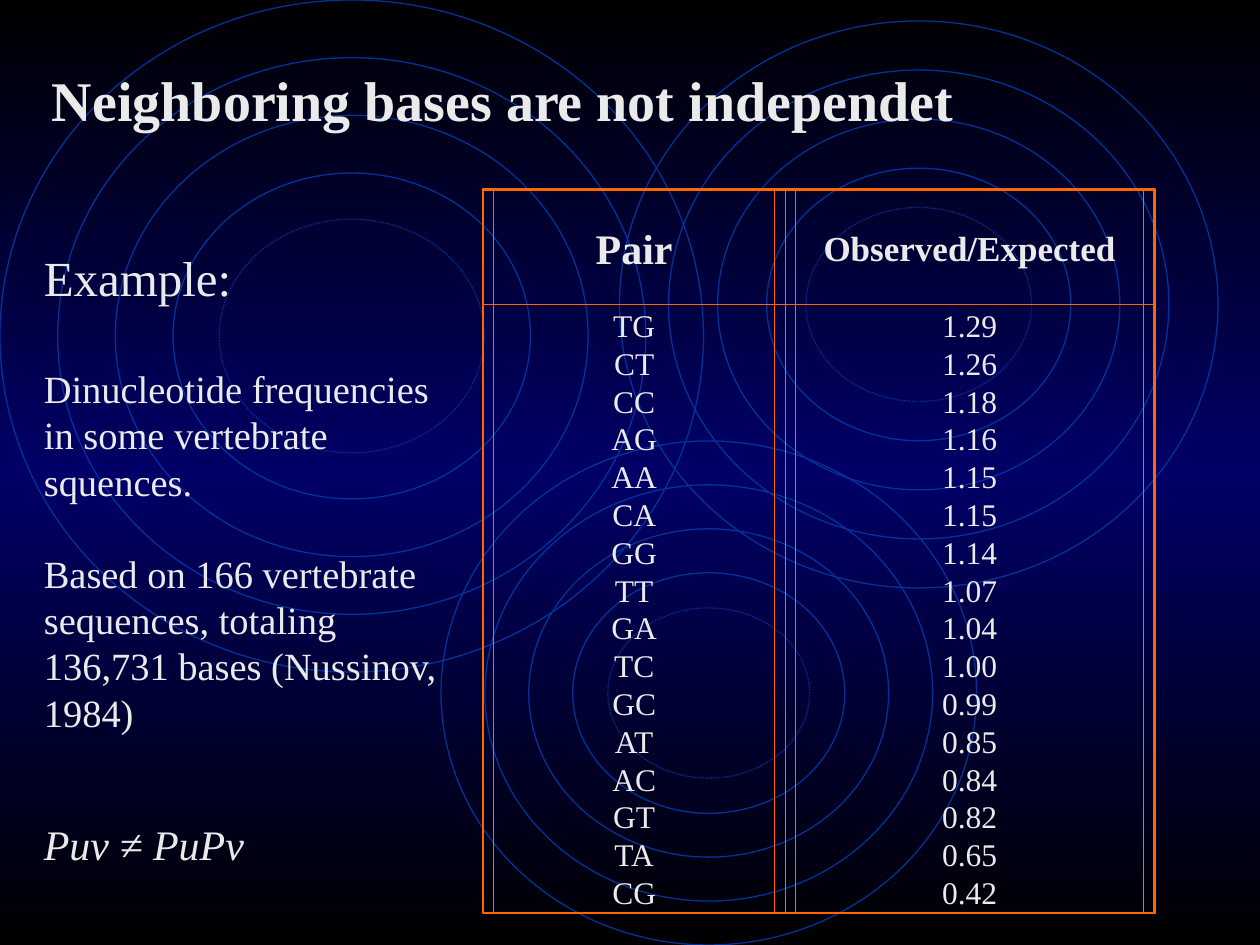
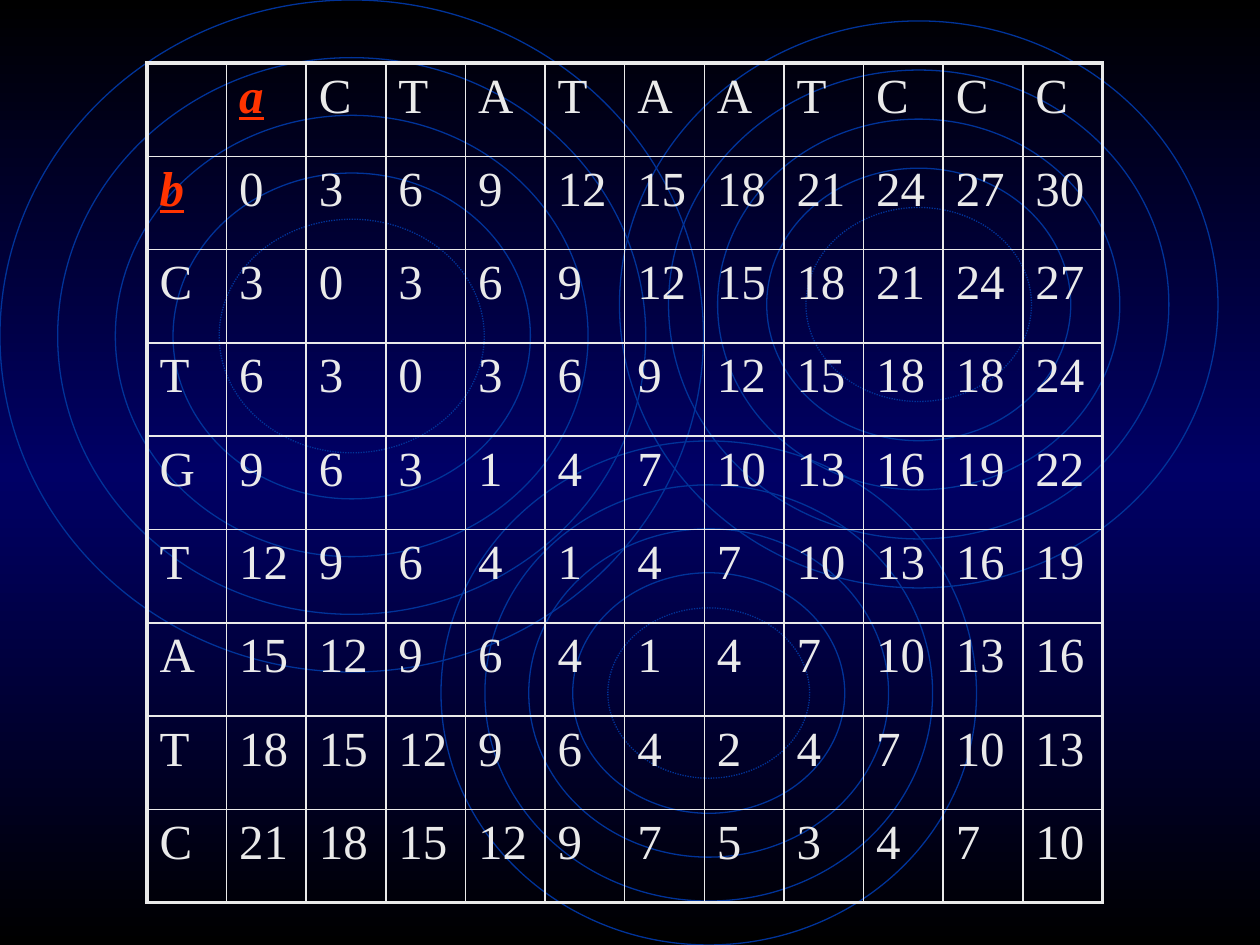
"""Build two slides on nucleotide pairs and a sequence distance matrix."""
from copy import deepcopy

from lxml import etree
from pptx import Presentation
from pptx.dml.color import RGBColor
from pptx.enum.dml import MSO_LINE
from pptx.enum.shapes import MSO_SHAPE
from pptx.enum.text import MSO_ANCHOR, MSO_AUTO_SIZE, PP_ALIGN
from pptx.oxml.ns import qn
from pptx.util import Inches, Pt

OVAL, RECTANGLE = MSO_SHAPE.OVAL, MSO_SHAPE.RECTANGLE
DOTTED = MSO_LINE.ROUND_DOT
LEFT, CENTER = PP_ALIGN.LEFT, PP_ALIGN.CENTER
TOP, MIDDLE = MSO_ANCHOR.TOP, MSO_ANCHOR.MIDDLE
NO_AUTOFIT = MSO_AUTO_SIZE.NONE

BLACK = RGBColor(0x00, 0x00, 0x00)
NAVY = RGBColor(0x00, 0x00, 0x66)
RING_BLUE = RGBColor(0x00, 0x33, 0x99)
ORANGE = RGBColor(0xFF, 0x66, 0x00)
RED = RGBColor(0xFF, 0x33, 0x00)
PALE = RGBColor(0xEA, 0xEA, 0xEA)
FONT = "Times New Roman"

GRID_COLUMNS, GRID_ROWS = 120, 90
TITLE_ONLY, BLANK = 5, 6
RING_GROUPS = [(0, 0, 67, 64), (42, 42, 51, 48), (59, 2, 57, 54)]
RING_STEPS = [0, 1, 2, 3, 3.8]
RING_STEP_SHARE = 0.082

PAIR_RATIOS = [
    ("TG", "1.29"), ("CT", "1.26"), ("CC", "1.18"), ("AG", "1.16"),
    ("AA", "1.15"), ("CA", "1.15"), ("GG", "1.14"), ("TT", "1.07"),
    ("GA", "1.04"), ("TC", "1.00"), ("GC", "0.99"), ("AT", "0.85"),
    ("AC", "0.84"), ("GT", "0.82"), ("TA", "0.65"), ("CG", "0.42"),
]
DISTANCES = [
    ["", *"aCTATAATCCC"],
    ["b", 0, 3, 6, 9, 12, 15, 18, 21, 24, 27, 30],
    ["C", 3, 0, 3, 6, 9, 12, 15, 18, 21, 24, 27],
    ["T", 6, 3, 0, 3, 6, 9, 12, 15, 18, 18, 24],
    ["G", 9, 6, 3, 1, 4, 7, 10, 13, 16, 19, 22],
    ["T", 12, 9, 6, 4, 1, 4, 7, 10, 13, 16, 19],
    ["A", 15, 12, 9, 6, 4, 1, 4, 7, 10, 13, 16],
    ["T", 18, 15, 12, 9, 6, 4, 2, 4, 7, 10, 13],
    ["C", 21, 18, 15, 12, 9, 7, 5, 3, 4, 7, 10],
]


class Deck:
    """Hold the shared style and the current slide."""

    def __init__(self):
        """Open a presentation with its background on the master."""
        self.presentation = Presentation()
        self.presentation.slide_width = Inches(10)
        self.presentation.slide_height = Inches(7.5)
        self.master = self.presentation.slide_master
        self.slide = None
        self.paint_background()

    def box(self, left, top, width, height):
        """Turn grid columns and rows into slide lengths."""
        column = self.presentation.slide_width / GRID_COLUMNS
        row = self.presentation.slide_height / GRID_ROWS
        return (round(left * column), round(top * row),
                round(width * column), round(height * row))

    def paint_background(self):
        """Give the master a gradient from black to navy and back."""
        fill = self.master.background.fill
        fill.gradient()
        fill.gradient_angle = 270
        stop_list = self.master.element.find(".//" + qn("a:gsLst"))
        stop_list.append(deepcopy(stop_list[0]))
        for index, (stop, color) in enumerate(
                zip(fill.gradient_stops, (BLACK, NAVY, BLACK))):
            stop.color.rgb = color
            stop.position = index / 2

    def add_slide(self, layout):
        """Start a new slide on the given layout."""
        layouts = self.presentation.slide_layouts
        self.slide = self.presentation.slides.add_slide(layouts[layout])

    def outline(self, kind, place, color, width=0.75):
        """Add an unfilled shape with a plain outline."""
        shape = self.slide.shapes.add_shape(kind, *self.box(*place))
        shape.shadow.inherit = False
        shape.fill.background()
        shape.line.color.rgb = color
        shape.line.width = Pt(width)
        return shape

    def rings(self):
        """Draw the concentric rings and move them to the master."""
        tree = self.master.shapes.element
        for left, top, width, height in RING_GROUPS:
            for step in RING_STEPS:
                inset = step * RING_STEP_SHARE * width
                place = (left + inset, top + inset,
                         width - 2 * inset, height - 2 * inset)
                ring = self.outline(OVAL, place, RING_BLUE)
                if step == RING_STEPS[-1]:
                    ring.line.dash_style = DOTTED
                ring.element.nvSpPr.cNvPr.set("id", str(100 + len(tree)))
                tree.append(ring.element)

    def add_text(self, paragraph, text, size, color=PALE, **styles):
        """Add one run in the shared font."""
        run = paragraph.add_run()
        run.text = text
        run.font.name = FONT
        run.font.size = Pt(size)
        run.font.color.rgb = color
        run.font.bold = styles.get("bold", False)
        run.font.italic = styles.get("italic", False)
        run.font.underline = styles.get("underline", False)

    def fill_frame(self, frame, lines, anchor=TOP, align=LEFT):
        """Fill a frame with lines of text, size, space before and styles."""
        frame.word_wrap = True
        frame.auto_size = NO_AUTOFIT
        frame.vertical_anchor = anchor
        for index, (text, size, space, styles) in enumerate(lines):
            paragraph = frame.add_paragraph() if index else frame.paragraphs[0]
            paragraph.alignment = align
            paragraph.space_before = Pt(space)
            self.add_text(paragraph, text, size, **styles)

    def title(self, text, place):
        """Place and format the title placeholder."""
        title = self.slide.shapes.title
        title.left, title.top, title.width, title.height = self.box(*place)
        self.fill_frame(title.text_frame, [(text, 32, 0, {"bold": True})])

    def text(self, place, lines):
        """Add a wrapped text box."""
        text_box = self.slide.shapes.add_textbox(*self.box(*place))
        self.fill_frame(text_box.text_frame, lines)

    def framed_cell(self, left, top, width, height, texts, size, bold=False):
        """Add a centred text cell inside a hairline frame."""
        cell = self.outline(RECTANGLE, (left, top, width, height), ORANGE)
        frame = cell.text_frame
        frame.margin_top = frame.margin_bottom = 0
        lines = [(text, size, 0, {"bold": bold}) for text in texts]
        self.fill_frame(frame, lines, MIDDLE, CENTER)
        self.outline(RECTANGLE, (left - 1, top, width + 2, height), ORANGE, 0)

    def border(self, cell, widths):
        """Set the left, right, top and bottom borders of a table cell."""
        cell.fill.background()
        properties = cell._tc.get_or_add_tcPr()
        for index, (side, width) in enumerate(zip("LRTB", widths)):
            line = etree.Element(qn("a:ln" + side), w=str(int(Pt(width))))
            solid = etree.SubElement(line, qn("a:solidFill"))
            etree.SubElement(solid, qn("a:srgbClr"), val=str(PALE))
            properties.insert(index, line)

    def matrix(self, place, rows):
        """Add an even table with a heavy outer border."""
        row_count, column_count = len(rows), len(rows[0])
        table = self.slide.shapes.add_table(
            row_count, column_count, *self.box(*place)).table
        table.first_row = table.horz_banding = False
        for row_index, row in enumerate(rows):
            for column_index, value in enumerate(row):
                cell = table.cell(row_index, column_index)
                edges = (column_index == 0, column_index == column_count - 1,
                         row_index == 0, row_index == row_count - 1)
                self.border(cell, [2.25 if edge else 1 for edge in edges])
                paragraph = cell.text_frame.paragraphs[0]
                if value in ("a", "b"):
                    self.add_text(paragraph, value, 28, RED,
                                  bold=True, italic=True, underline=True)
                elif value != "":
                    self.add_text(paragraph, str(value), 28)


def pair_slide(deck):
    """Show observed to expected ratios of base pairs."""
    deck.add_slide(TITLE_ONLY)
    deck.rings()
    deck.title("Neighboring bases are not independet", (3.75, 5.6, 89, 10))
    pairs, ratios = zip(*PAIR_RATIOS)
    columns = [(47, 26.8, "Pair", 24, pairs),
               (75.8, 33.1, "Observed/Expected", 20, ratios)]
    for left, width, heading, size, values in columns:
        deck.framed_cell(left, 18.1, width, 10.9, [heading], size, bold=True)
        deck.framed_cell(left, 29, width, 57.9, values, 18)
    deck.outline(RECTANGLE, (46, 18, 64, 69), ORANGE)
    deck.text((3, 23, 42, 65.9), [
        ("Example:", 28, 0, {}),
        ("Dinucleotide frequencies in some vertebrate squences.", 22, 33.6, {}),
        ("Based on 166 vertebrate sequences, totaling 136,731 bases "
         "(Nussinov, 1984)", 22, 26.4, {}),
        ("Puv ≠ PuPv", 24, 48, {"italic": True}),
    ])


def matrix_slide(deck):
    """Show the distance matrix of sequences a and b."""
    deck.add_slide(BLANK)
    deck.matrix((14, 6, 91, 80), DISTANCES)


def main():
    """Build and save the presentation."""
    deck = Deck()
    pair_slide(deck)
    matrix_slide(deck)
    deck.presentation.save("out.pptx")


if __name__ == "__main__":
    main()
